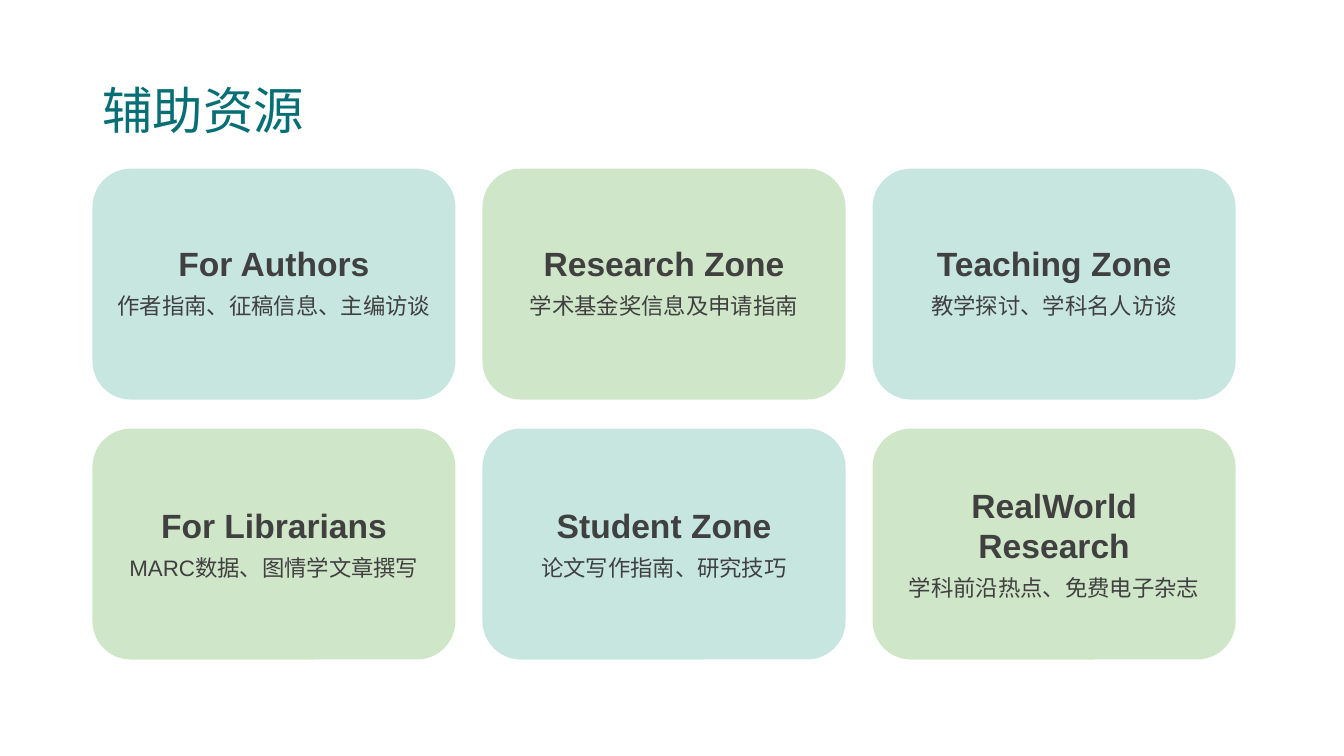
from pptx import Presentation
from pptx.dml.color import RGBColor
from pptx.enum.shapes import MSO_SHAPE as Shape
from pptx.enum.text import MSO_ANCHOR as Anchor, MSO_AUTO_SIZE as AutoSize, PP_ALIGN as Align
from pptx.util import Cm, Pt

MINT, GREEN, TEAL, GREY = "C7E6E0", "D0E6C9", "066E75", "404040"

# Card grid, in cm
LEFT, TOP = 2.33, 4.25
CARD_WIDTH, CARD_HEIGHT = 9.15, 5.82
COLUMN_STEP, ROW_STEP = 9.83, 6.55
CAPTION_INSET = 0.35
CAPTION_CENTRES = (7.09, 13.69)
LINE_HEIGHT = 1.02

# Each row: heading, description, number of heading lines
RESOURCES = [
    [("For Authors", "作者指南、征稿信息、主编访谈", 1),
     ("Research Zone", "学术基金奖信息及申请指南", 1),
     ("Teaching Zone", "教学探讨、学科名人访谈", 1)],
    [("For Librarians", "MARC数据、图情学文章撰写", 1),
     ("Student Zone", "论文写作指南、研究技巧", 1),
     ("RealWorld Research", "学科前沿热点、免费电子杂志", 2)],
]


def colour(value):
    return RGBColor.from_string(value)


def apply(target, **values):
    for name, value in values.items():
        setattr(target, name, value)


class SlideBuilder:
    font_name = "Arial"

    def __init__(self, presentation):
        self.slide = presentation.slides.add_slide(presentation.slide_layouts[5])

    def add_text(self, paragraph, text, size, hex_colour, bold=False, **layout):
        run = paragraph.add_run()
        run.text = text
        apply(run.font, name=self.font_name, size=Pt(size), bold=bold)
        run.font.color.rgb = colour(hex_colour)
        apply(paragraph, **layout)

    def title(self, text, left, top, width, height):
        title = self.slide.shapes.title
        apply(title, left=Cm(left), top=Cm(top), width=Cm(width), height=Cm(height))
        frame = title.text_frame
        apply(frame, vertical_anchor=Anchor.MIDDLE, word_wrap=True, auto_size=AutoSize.NONE)
        self.add_text(frame.paragraphs[0], text, 36, TEAL,
                      alignment=Align.LEFT, line_spacing=0.9)

    def card(self, left, top, fill):
        card = self.slide.shapes.add_shape(
            Shape.ROUNDED_RECTANGLE, Cm(left), Cm(top), Cm(CARD_WIDTH), Cm(CARD_HEIGHT))
        card.shadow.inherit = False
        card.fill.solid()
        card.fill.fore_color.rgb = colour(fill)
        card.line.fill.background()

    def caption(self, left, centre, heading, description, heading_lines):
        height = 1.16 + heading_lines * LINE_HEIGHT
        box = self.slide.shapes.add_textbox(
            Cm(left + CAPTION_INSET), Cm(centre - height / 2),
            Cm(CARD_WIDTH - 2 * CAPTION_INSET), Cm(height))
        frame = box.text_frame
        apply(frame, word_wrap=True, auto_size=AutoSize.SHAPE_TO_FIT_TEXT)
        layout = {"alignment": Align.CENTER, "space_after": Pt(6)}
        self.add_text(frame.paragraphs[0], heading, 24, GREY, bold=True, **layout)
        self.add_text(frame.add_paragraph(), description, 16, GREY, **layout)


def main():
    presentation = Presentation()
    apply(presentation, slide_width=Cm(33.87), slide_height=Cm(19.05))
    builder = SlideBuilder(presentation)

    # Title
    builder.title("辅助资源", LEFT, 1.01, 29.21, 3.68)

    # Cards in alternating colours, with their captions
    for row, resources in enumerate(RESOURCES):
        for column, resource in enumerate(resources):
            left = LEFT + column * COLUMN_STEP
            builder.card(left, TOP + row * ROW_STEP, (MINT, GREEN)[(row + column) % 2])
            builder.caption(left, CAPTION_CENTRES[row], *resource)

    presentation.save("out.pptx")


if __name__ == "__main__":
    main()
